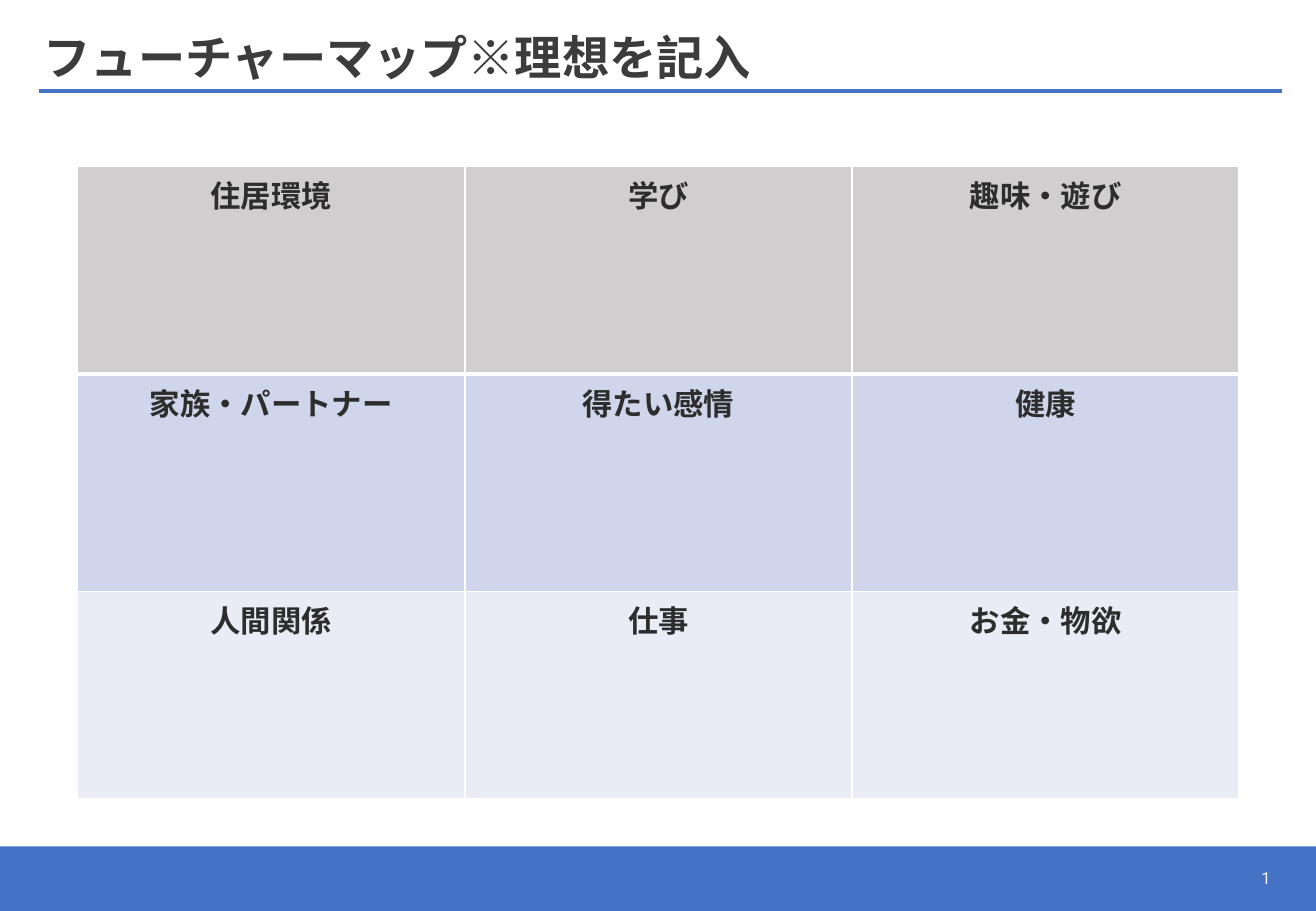
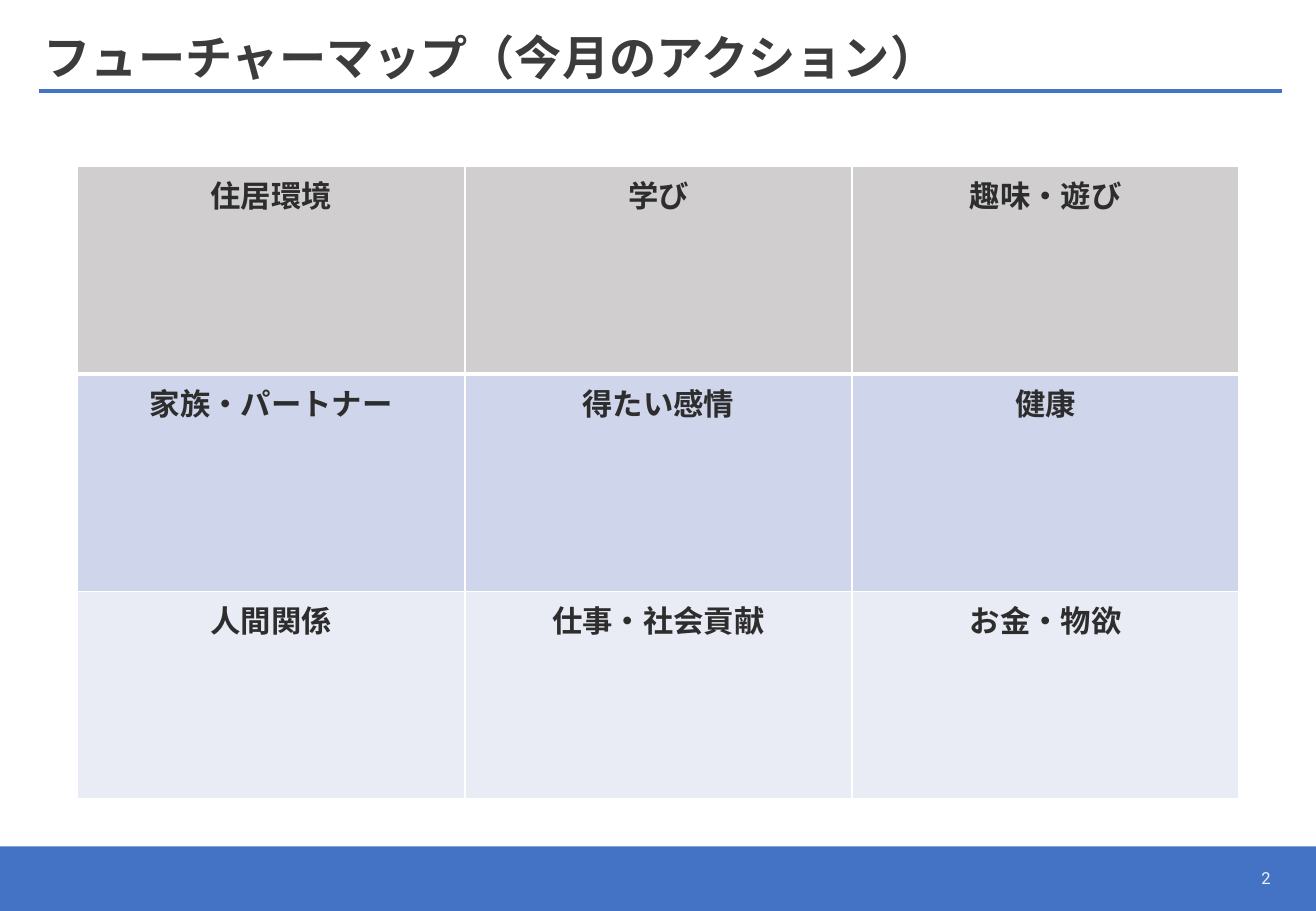
from lxml.etree import SubElement
from pptx import Presentation
from pptx.dml.color import RGBColor
from pptx.enum.shapes import MSO_CONNECTOR, MSO_SHAPE
from pptx.enum.text import MSO_ANCHOR, PP_ALIGN
from pptx.oxml import parse_xml
from pptx.oxml.ns import nsdecls, qn
from pptx.util import Pt

COLORS = {
    "blue": "4472C4", "white": "FFFFFF", "title": "3C3C3C",
    "number": "F2F2F2", "label": "2D2D2D",
}
ROW_FILLS = ["D0CECE", "CFD5EA", "E9EBF5"]
FONT, NUM_FONT = "Noto Sans CJK JP", "Roboto"


def areas(work):
    return [
        ["住居環境", "学び", "趣味・遊び"],
        ["家族・パートナー", "得たい感情", "健康"],
        ["人間関係", work, "お金・物欲"],
    ]


SLIDES = [
    ("フューチャーマップ※理想を記入", areas("仕事")),
    ("フューチャーマップ（今月のアクション）", areas("仕事・社会貢献")),
]

WIDTH, HEIGHT = 780, 540
BAND_TOP = 501.8
RULE_LEFT, RULE_RIGHT, RULE_Y = 23, 760, 54
TABLE_LEFT, TABLE_TOP, COL_WIDTH = 46, 98.6, 229.5
ROW_HEIGHTS = [123, 129, 123]
THIN, THICK = 1, 3


def rgb(name):
    return RGBColor.from_string(COLORS[name])


def style(font, size, color, name=FONT, bold=False):
    font.size, font.bold, font.name = Pt(size), bold, name
    font.color.rgb = rgb(color)


def add_run(para, text, size, color):
    """Add a bold run whose font also covers Japanese glyphs."""
    run = para.add_run()
    run.text = text
    style(run.font, size, color, bold=True)
    SubElement(run.font._element, qn("a:ea"), typeface=FONT)


def add_title(slide, text):
    title = slide.shapes.title
    title.left, title.top = Pt(18.7), Pt(14.4)
    title.width, title.height = Pt(600), Pt(40.3)
    frame = title.text_frame
    frame.vertical_anchor = MSO_ANCHOR.BOTTOM
    para = frame.paragraphs[0]
    para.alignment, para.line_spacing = PP_ALIGN.LEFT, 0.9
    add_run(para, text, 28, "title")


def add_frame(slide):
    """Draw the footer band and the rule under the title."""
    band = slide.shapes.add_shape(
        MSO_SHAPE.RECTANGLE, 0, Pt(BAND_TOP), Pt(WIDTH), Pt(HEIGHT - BAND_TOP))
    band.shadow.inherit = False
    band.fill.solid()
    band.fill.fore_color.rgb = rgb("blue")
    band.line.fill.background()
    rule = slide.shapes.add_connector(
        MSO_CONNECTOR.STRAIGHT, Pt(RULE_LEFT), Pt(RULE_Y), Pt(RULE_RIGHT), Pt(RULE_Y))
    rule.line.color.rgb = rgb("blue")
    rule.line.width = Pt(2.25)
    SubElement(rule._element.spPr, qn("a:effectLst"))


def add_number(slide, number):
    box = slide.shapes.add_textbox(Pt(584.6), Pt(506.2), Pt(175.7), Pt(28.8))
    frame = box.text_frame
    frame.word_wrap = True
    frame.vertical_anchor = MSO_ANCHOR.MIDDLE
    para = frame.paragraphs[0]
    para.alignment = PP_ALIGN.RIGHT
    run = para.add_run()
    run.text = str(number)
    style(run.font, 9.8, "number", NUM_FONT)
    field = parse_xml(
        f'<a:fld {nsdecls("a")} type="slidenum" '
        'id="{B6F15528-21DE-4FAA-801E-634DDDAF4B2B}"/>')
    run._r.addprevious(field)
    field.extend(list(run._r))
    para._p.remove(run._r)


def set_borders(cell, top, bottom):
    props = cell._tc.get_or_add_tcPr()
    for side, width in zip("LRTB", (THIN, THIN, top, bottom)):
        line = SubElement(props, qn(f"a:ln{side}"), w=str(Pt(width)))
        fill = SubElement(line, qn("a:solidFill"))
        SubElement(fill, qn("a:srgbClr"), val=COLORS["white"])


def add_map(slide, labels):
    cols = len(labels[0])
    table = slide.shapes.add_table(
        len(labels), cols, Pt(TABLE_LEFT), Pt(TABLE_TOP),
        Pt(COL_WIDTH * cols), Pt(sum(ROW_HEIGHTS))).table
    table.first_row = table.horz_banding = False
    for col in table.columns:
        col.width = Pt(COL_WIDTH)
    for r, texts in enumerate(labels):
        table.rows[r].height = Pt(ROW_HEIGHTS[r])
        for c, text in enumerate(texts):
            cell = table.cell(r, c)
            set_borders(cell, THICK if r == 1 else THIN, THICK if r == 0 else THIN)
            cell.fill.solid()
            cell.fill.fore_color.rgb = RGBColor.from_string(ROW_FILLS[r])
            para = cell.text_frame.paragraphs[0]
            para.alignment = PP_ALIGN.CENTER
            add_run(para, text, 18, "label")


def main():
    deck = Presentation()
    deck.slide_width, deck.slide_height = Pt(WIDTH), Pt(HEIGHT)
    layout = deck.slide_layouts.get_by_name("Title Only")
    for number, (title, labels) in enumerate(SLIDES, 1):
        slide = deck.slides.add_slide(layout)
        add_frame(slide)
        add_number(slide, number)
        add_title(slide, title)
        add_map(slide, labels)
    deck.save("out.pptx")


if __name__ == "__main__":
    main()
